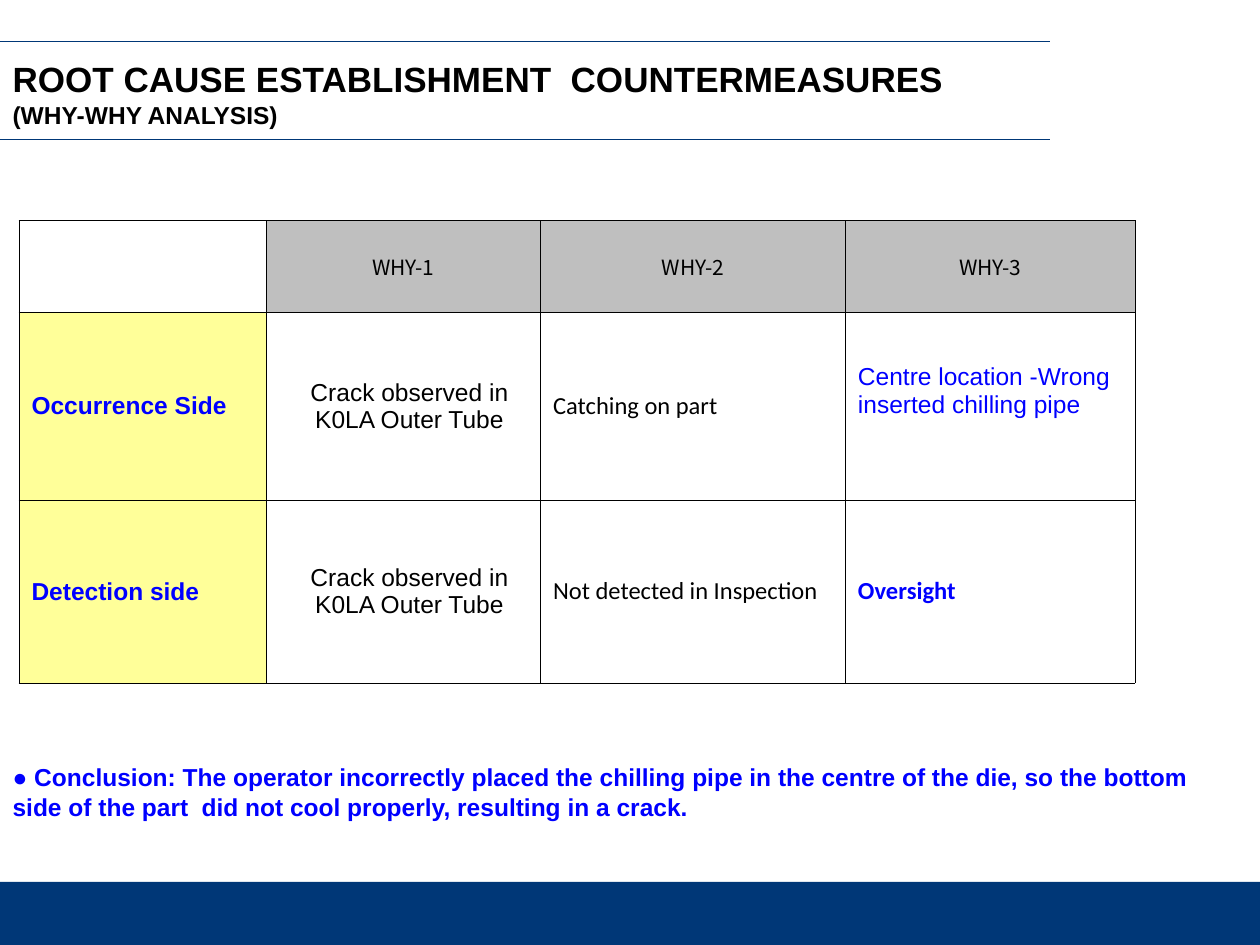
from dataclasses import dataclass

from lxml.etree import SubElement as Sub
from pptx import Presentation as Deck
from pptx.dml.color import RGBColor as Color
from pptx.enum.shapes import MSO_CONNECTOR as Link, MSO_SHAPE as Shape
from pptx.enum.text import MSO_ANCHOR as Anchor, MSO_AUTO_SIZE as Fit, PP_ALIGN as Align
from pptx.oxml import parse_xml
from pptx.oxml.ns import nsdecls, qn
from pptx.util import Inches, Pt


@dataclass(frozen=True)
class Theme:
    navy: str = "003777"
    black: str = "000000"
    white: str = "FFFFFF"
    gray: str = "BFBFBF"
    yellow: str = "FFFF99"
    blue: str = "0000FF"
    sans: str = "Arial"
    soft: str = "Calibri"
    head: str = "Noto Sans CJK JP"
    big: int = 20
    mid: int = 14
    small: int = 12
    rule: float = 0.75
    edge: float = 0.25


T = Theme()
WIDE, HIGH = Inches(10), Inches(7.5)

# Table grid, in inches
COLS = (1.96, 2.18, 2.42, 2.3)
ROWS = (0.73, 1.49, 1.45)
CRACK = "Crack observed in K0LA Outer Tube"


def paint(part, hue):
    part.fill.solid()
    part.fill.fore_color.rgb = Color.from_string(hue)


def add_run(para, text, size=T.mid, face=T.sans, hue=T.black, bold=False):
    run = para.add_run()
    run.text = text
    font = run.font
    font.size, font.name, font.bold = Pt(size), face, bold
    font.color.rgb = Color.from_string(hue)


def add_bar(slide, share):
    """Fill the foot of the slide with a plain band."""
    tall = int(HIGH * share)
    bar = slide.shapes.add_shape(Shape.RECTANGLE, 0, HIGH - tall, WIDE, tall)
    bar.shadow.inherit = False
    paint(bar, T.navy)
    bar.line.fill.background()


def add_rule(slide, top, share):
    """Draw a level line from the left edge."""
    y = Inches(top)
    rule = slide.shapes.add_connector(Link.STRAIGHT, 0, y, int(WIDE * share), y)
    rule.line.color.rgb = Color.from_string(T.navy)
    rule.line.width = Pt(T.rule)
    Sub(rule._element.spPr, qn("a:effectLst"))


def place(holder, left, top, width, height, anchor):
    """Move a placeholder and return its first paragraph."""
    holder.left, holder.top = Inches(left), Inches(top)
    holder.width, holder.height = Inches(width), Inches(height)
    frame = holder.text_frame
    frame.word_wrap, frame.auto_size = True, Fit.NONE
    frame.vertical_anchor = anchor
    para = frame.paragraphs[0]
    para.alignment, para.space_before = Align.LEFT, Pt(0)
    return para


def add_title(slide):
    para = place(slide.shapes.title, 0, 0.39, 8.34, 0.7, Anchor.MIDDLE)
    add_run(para, "ROOT CAUSE ESTABLISHMENT  COUNTERMEASURES", T.big, bold=True)
    para.add_line_break()
    add_run(para, "(WHY-WHY ANALYSIS)", bold=True)


def add_close(slide):
    """Write the conclusion, with a tab stop for its gap."""
    para = place(slide.placeholders[1], 0, 6, 9.83, 0.67, Anchor.TOP)
    props = para._p.get_or_add_pPr()
    props.set("marL", "0")
    props.set("indent", "0")
    Sub(props, qn("a:buNone"))
    tabs = Sub(props, qn("a:tabLst"))
    Sub(tabs, qn("a:tab"), pos=str(Inches(2.58)), algn="l")
    add_run(para, "● Conclusion: The operator incorrectly placed the chilling pipe "
            "in the centre of the die, so the bottom side of the part\t"
            "did not cool properly, resulting in a crack.", hue=T.blue, bold=True)


def add_edge(cell):
    """Give a cell a thin line on all four sides."""
    props = cell._tc.get_or_add_tcPr()
    for spot, side in enumerate("LRTB"):
        props.insert(spot, parse_xml(
            f'<a:ln{side} {nsdecls("a")} w="{int(Pt(T.edge))}"><a:solidFill>'
            f'<a:srgbClr val="{T.black}"/></a:solidFill></a:ln{side}>'))


def set_cell(cell, text, fill, align=Align.LEFT, left=0.1, low=0, **style):
    paint(cell, fill)
    add_edge(cell)
    cell.vertical_anchor = Anchor.MIDDLE
    cell.margin_left, cell.margin_bottom = Inches(left), Inches(low)
    cell.margin_top = cell.margin_right = 0
    if text:
        para = cell.text_frame.paragraphs[0]
        para.alignment = align
        add_run(para, text, **style)


def add_grid(slide):
    grid = slide.shapes.add_table(
        len(ROWS), len(COLS), Inches(0.15), Inches(1.75),
        Inches(sum(COLS)), Inches(sum(ROWS))).table
    grid.first_row = grid.horz_banding = False
    for col, width in zip(grid.columns, COLS):
        col.width = Inches(width)
    for row, height in zip(grid.rows, ROWS):
        row.height = Inches(height)

    # Heading row
    set_cell(grid.cell(0, 0), "", T.white)
    for c in range(1, len(COLS)):
        set_cell(grid.cell(0, c), f"WHY-{c}", T.gray, Align.CENTER, 0,
                 size=T.small, face=T.head)

    # One row per side: label, two whys, then the root cause
    sides = (
        ("Occurrence Side", "Catching on part",
         "Centre location -Wrong inserted chilling pipe",
         dict(low=0.24)),
        ("Detection side", "Not detected in Inspection", "Oversight",
         dict(face=T.soft, bold=True)),
    )
    for r, (label, why, root, style) in enumerate(sides, 1):
        set_cell(grid.cell(r, 0), label, T.yellow, hue=T.blue, bold=True)
        set_cell(grid.cell(r, 1), CRACK, T.white, Align.CENTER)
        set_cell(grid.cell(r, 2), why, T.white, face=T.soft)
        set_cell(grid.cell(r, 3), root, T.white, hue=T.blue, **style)


def main():
    deck = Deck()
    deck.slide_width, deck.slide_height = WIDE, HIGH
    slide = deck.slides.add_slide(deck.slide_layouts[1])
    add_bar(slide, 1 / 15)
    for top in (0.33, 1.11):
        add_rule(slide, top, 5 / 6)
    add_title(slide)
    add_grid(slide)
    add_close(slide)
    deck.save("out.pptx")


if __name__ == "__main__":
    main()
